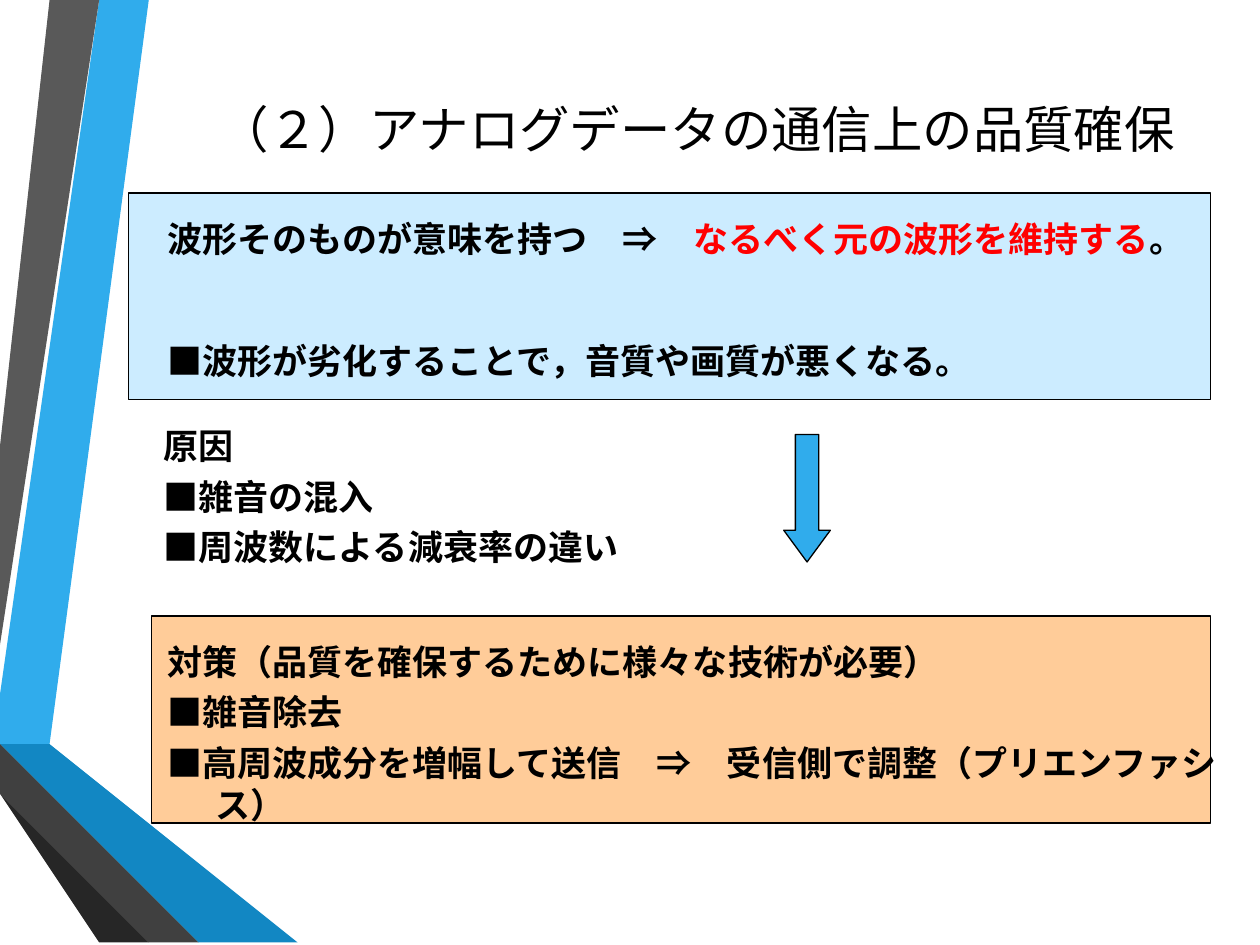
from dataclasses import dataclass

from lxml import etree
from pptx import Presentation
from pptx.dml.color import RGBColor
from pptx.enum.shapes import MSO_SHAPE
from pptx.enum.text import MSO_ANCHOR, PP_ALIGN
from pptx.util import Cm, Pt

RECT, ARROW = MSO_SHAPE.RECTANGLE, MSO_SHAPE.DOWN_ARROW
TOP, MIDDLE = MSO_ANCHOR.TOP, MSO_ANCHOR.MIDDLE
LEFT, RIGHT = PP_ALIGN.LEFT, PP_ALIGN.RIGHT


@dataclass(frozen=True)
class Theme:
    ink: str = "000000"
    accent: str = "FF0000"
    sky: str = "30ACEC"
    blue: str = "1287C3"
    navy: str = "0C5A82"
    gray: str = "595959"
    dark: str = "404040"
    black: str = "262626"
    pale: str = "CCECFF"
    peach: str = "FFCC99"
    sans: str = "Calibri"
    serif: str = "Times New Roman"
    title: float = 28.8
    body: float = 20


THEME = Theme()

# Ribbon outlines, in centimetres, from back to front
RIBBONS = [
    (THEME.sky, [(0, 13.82), (0, 14.61), (0.56, 14.71), (2.97, 0), (2.26, 0)]),
    (THEME.gray, [(2.11, 0), (1.4, 0), (0, 8.53), (0, 12.85)]),
    (THEME.black, [(0, 15.72), (0, 15.77), (2.36, 19.05), (2.51, 19.05)]),
    (THEME.navy, [(0, 14.71), (0, 14.73), (3.96, 19.05), (4.14, 19.05)]),
    (THEME.blue, [(0, 14.71), (4.14, 19.05), (5.92, 19.05), (0.56, 14.71),
                  (0, 14.61)]),
    (THEME.dark, [(0, 15.72), (2.51, 19.05), (3.84, 19.05), (0, 14.88)]),
]


class Deck:
    """Holds the theme and the slide being drawn."""

    def __init__(self, theme):
        self.theme = theme
        self.file = Presentation()
        self.file.slide_width, self.file.slide_height = Cm(25.4), Cm(19.05)
        self.slide = self.file.slides.add_slide(self.file.slide_layouts[6])

    def paint(self, shape, fill, edge=None):
        shape.shadow.inherit = False
        shape.fill.solid()
        shape.fill.fore_color.rgb = RGBColor.from_string(fill)
        if edge:
            shape.line.color.rgb = RGBColor.from_string(edge)
            shape.line.width = Pt(0.75)
        else:
            shape.line.fill.background()

    def ribbon(self, fill, points):
        pen = self.slide.shapes.build_freeform(*points[0], scale=Cm(1))
        pen.add_line_segments(points[1:], close=True)
        self.paint(pen.convert_to_shape(), fill)

    def shape(self, kind, area, fill, adjust=()):
        item = self.slide.shapes.add_shape(kind, *map(Cm, area))
        for index, value in enumerate(adjust):
            item.adjustments[index] = value
        self.paint(item, fill, self.theme.ink)

    def text(self, area, lines, font, size=THEME.body, bold=True, align=LEFT,
             anchor=TOP, hang=0, gap=5):
        """Each line is a list of (wording, colour) runs or a plain string."""
        frame = self.slide.shapes.add_textbox(*map(Cm, area)).text_frame
        frame.word_wrap, frame.vertical_anchor = True, anchor
        for index, line in enumerate(lines):
            para = frame.add_paragraph() if index else frame.paragraphs[0]
            para.alignment = align
            para.space_before = Pt(gap if index else 0)
            if hang:
                props = para._p.get_or_add_pPr()
                props.set("marL", str(Cm(hang)))
                props.set("indent", str(-Cm(hang)))
            runs = [(line, self.theme.ink)] if isinstance(line, str) else line
            for wording, color in runs:
                run = para.add_run()
                run.text = wording
                run.font.name, run.font.size = font, Pt(size)
                run.font.bold = bold
                run.font.color.rgb = RGBColor.from_string(color)


def main():
    deck = Deck(THEME)
    for fill, points in RIBBONS:
        deck.ribbon(fill, points)

    deck.shape(RECT, (3.05, 12.42, 21.36, 4.17), THEME.peach)
    deck.shape(RECT, (2.59, 3.89, 21.82, 4.17), THEME.pale)

    deck.text((2.34, 1.17, 21.59, 2.84),
              ["（２）アナログデータの通信上の品質確保"],
              THEME.sans, size=THEME.title, bold=False, align=RIGHT,
              anchor=MIDDLE)
    deck.text((3.12, 4.27, 21.72, 3.4),
              [[("波形そのものが意味を持つ　⇒　", THEME.ink),
                ("なるべく元の波形を維持する", THEME.accent),
                ("。", THEME.ink)],
               "■波形が劣化することで，音質や画質が悪くなる。"],
              THEME.sans, hang=0.79, gap=45.5)
    deck.text((3.05, 8.43, 20.6, 3.45),
              ["原因", "■雑音の混入", "■周波数による減衰率の違い"],
              THEME.serif, hang=0.97)
    deck.text((3.12, 12.78, 21.72, 3.45),
              ["対策（品質を確保するために様々な技術が必要）",
               "■雑音除去",
               "■高周波成分を増幅して送信　⇒　受信側で調整（プリエンファシス）"],
              THEME.serif, hang=0.97)

    deck.shape(ARROW, (15.8, 8.76, 0.94, 2.57), THEME.sky, adjust=(0.5, 0.68))
    deck.file.save("out.pptx")


if __name__ == "__main__":
    main()
